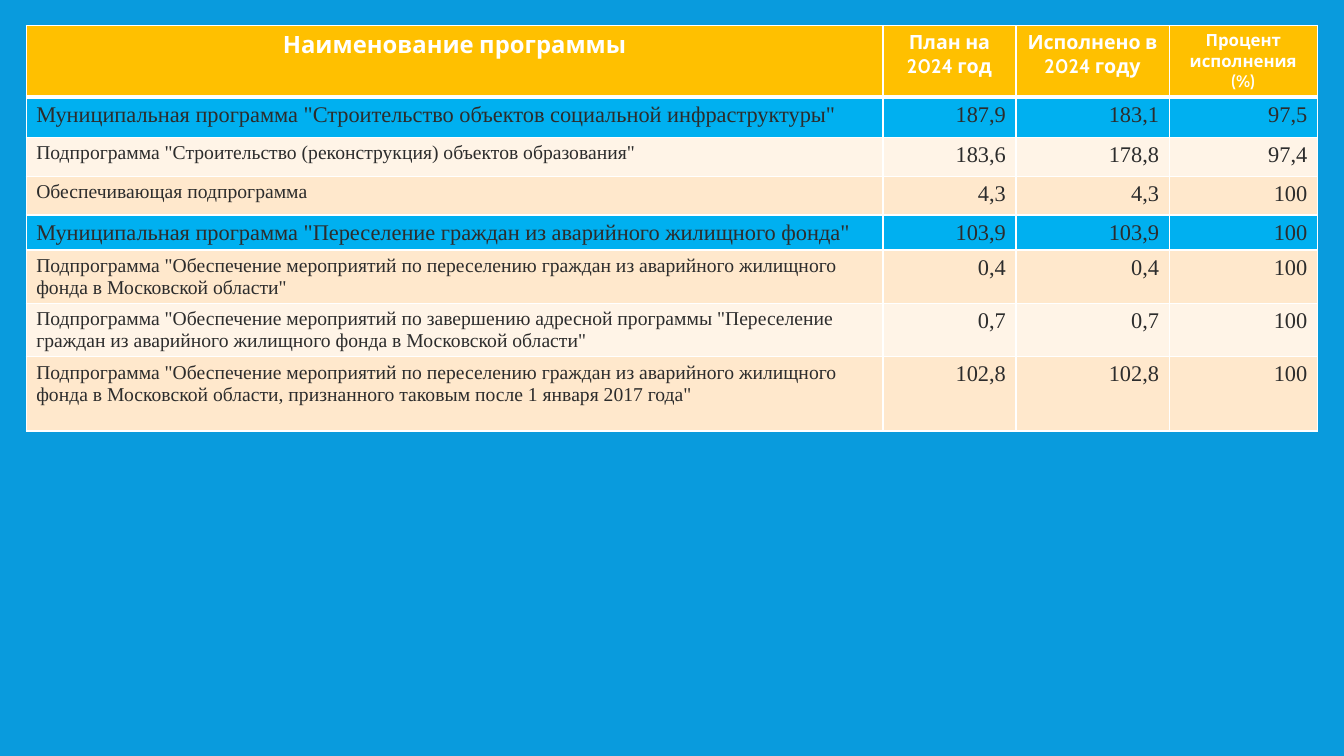
import pptx
import pptx.util
import pptx.dml.color
import pptx.enum.text
import pptx.oxml
import pptx.oxml.ns

Pt = pptx.util.Pt
ALIGN = pptx.enum.text.PP_ALIGN
COLORS = {"back": "099BDD", "head": "FFC000", "main": "00B0F0", "light": "FFF4E7",
          "dark": "FFE8CC", "ink": "2C2C2C", "white": "FFFFFF"}


def color(name):
    return pptx.dml.color.RGBColor.from_string(COLORS[name])


def border(cell, side, width):
    cell._tc.get_or_add_tcPr().append(pptx.oxml.parse_xml(
        f'<a:{side} {pptx.oxml.ns.nsdecls("a")} w="{Pt(width)}"><a:solidFill>'
        f'<a:srgbClr val="{COLORS["white"]}"/></a:solidFill></a:{side}>'))


# Fill, row height and texts of each row
rows = [
    ("head", 50.7, "Наименование программы", "План на 2024 год",
     "Исполнено в 2024 году", "Процент исполнения (%)"),
    ("main", 28.7, 'Муниципальная программа "Строительство объектов социальной инфраструктуры"',
     "187,9", "183,1", "97,5"),
    ("light", 28, 'Подпрограмма "Строительство (реконструкция) объектов образования"',
     "183,6", "178,8", "97,4"),
    ("dark", 27.5, "Обеспечивающая подпрограмма", "4,3", "4,3", "100"),
    ("main", 24.6, 'Муниципальная программа "Переселение граждан из аварийного жилищного фонда"',
     "103,9", "103,9", "100"),
    ("dark", 38, 'Подпрограмма "Обеспечение мероприятий по переселению граждан из аварийного '
     'жилищного фонда в Московской области"', "0,4", "0,4", "100"),
    ("light", 38, 'Подпрограмма "Обеспечение мероприятий по завершению адресной программы '
     '"Переселение граждан из аварийного жилищного фонда в Московской области"',
     "0,7", "0,7", "100"),
    ("dark", 53, 'Подпрограмма "Обеспечение мероприятий по переселению граждан из аварийного '
     'жилищного фонда в Московской области, признанного таковым после 1 января 2017 года"',
     "102,8", "102,8", "100"),
]
widths = [612, 95, 109.4, 105.9]
heads = [17, 14, 14, 12]

# Slide and background
deck = pptx.Presentation()
deck.slide_width, deck.slide_height = Pt(960), Pt(540)
slide = deck.slides.add_slide(deck.slide_layouts[6])
slide.background.fill.solid()
slide.background.fill.fore_color.rgb = color("back")

# Table
high = sum(row[1] for row in rows)
table = slide.shapes.add_table(len(rows), len(widths), Pt(18.7), Pt(18.2),
                               Pt(sum(widths)), Pt(high)).table
table.horz_banding = False
for col, width in zip(table.columns, widths):
    col.width = Pt(width)

# Cells
for r, (kind, height, *texts) in enumerate(rows):
    table.rows[r].height = Pt(height)
    head = kind == "head"
    for c, text in enumerate(texts):
        cell = table.cell(r, c)
        for side in ("lnL", "lnR", "lnT", "lnB"):
            thick = (head and side == "lnB") or (r == 1 and side == "lnT")
            border(cell, side, 3 if thick else 1)
        cell.fill.solid()
        cell.fill.fore_color.rgb = color(kind)
        cell.text_frame.text = text
        para = cell.text_frame.paragraphs[0]
        if head:
            para.alignment = ALIGN.CENTER
            size = heads[c]
        else:
            para.alignment = ALIGN.RIGHT if c else ALIGN.LEFT
            size = 16 if c or kind == "main" else 14
        font = para.runs[0].font
        font.name = "Cabin" if head else "Times New Roman"
        font.size = Pt(size)
        font.bold = head
        font.color.rgb = color("white" if head else "ink")

deck.save("out.pptx")
